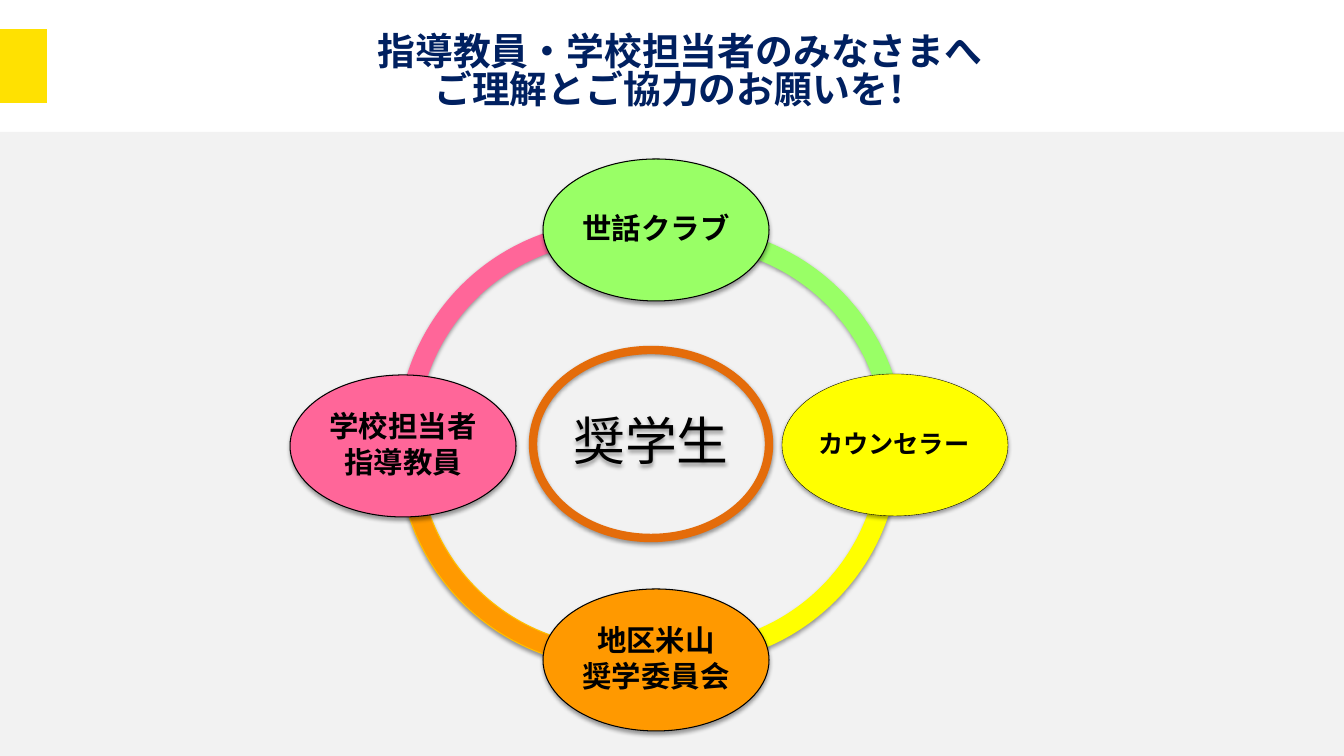
from lxml import etree
from pptx import Presentation
from pptx import util as u
from pptx.dml.color import RGBColor
from pptx.enum import shapes, text
from pptx.oxml.ns import qn

FONT = "Noto Sans CJK JP"
PX = 914400 / 100.8
PINK, ORANGE, YELLOW, GREEN = "FF6699", "FF9900", "FFFF00", "99FF66"
KIND = shapes.MSO_SHAPE
CENTER, LEFT = text.PP_ALIGN.CENTER, text.PP_ALIGN.LEFT


def add_part(kind, box, fill=None, line=None, line_width=0.75, shadow=True):
    """Add a preset shape at box (left, top, width, height in px)."""
    shape = slide.shapes.add_shape(kind, *[round(n * PX) for n in box])
    for target, colour in ((shape.fill, fill), (shape.line.fill, line)):
        if colour:
            target.solid()
            target.fore_color.rgb = RGBColor.from_string(colour)
        else:
            target.background()
    if line:
        shape.line.width = u.Pt(line_width)
    shape.shadow.inherit = False
    if shadow:
        effects = shape._element.spPr.find(qn("a:effectLst"))
        outer = etree.SubElement(effects, qn("a:outerShdw"), blurRad="40000",
                                 dist="20000", dir="5400000", rotWithShape="0")
        colour = etree.SubElement(outer, qn("a:srgbClr"), val="000000")
        etree.SubElement(colour, qn("a:alpha"), val="38000")
    return shape


def write(shape, lines, size, colour="000000", bold=True, align=CENTER,
          spacing=0.9, after=3, inset=3):
    """Fill a shape with one paragraph for each line of text."""
    frame = shape.text_frame
    margin = round(inset * PX)
    frame_format = {"word_wrap": True, "vertical_anchor": text.MSO_ANCHOR.MIDDLE,
                    "margin_left": margin, "margin_right": margin,
                    "margin_top": margin, "margin_bottom": margin}
    for name, value in frame_format.items():
        setattr(frame, name, value)
    paragraph_format = {"alignment": align, "line_spacing": spacing,
                        "space_after": u.Pt(after)}
    font_format = {"name": FONT, "size": u.Pt(size), "bold": bold}
    for index, line in enumerate(lines):
        paragraph = frame.add_paragraph() if index else frame.paragraphs[0]
        paragraph.text = line
        for name, value in paragraph_format.items():
            setattr(paragraph, name, value)
        for run in paragraph.runs:
            for name, value in font_format.items():
                setattr(run.font, name, value)
            run.font.color.rgb = RGBColor.from_string(colour)
            latin = run._r.rPr.find(qn("a:latin"))
            latin.addnext(etree.Element(qn("a:ea"), typeface=FONT))


presentation = Presentation()
presentation.slide_width = round(1344 * PX)
presentation.slide_height = round(756 * PX)
slide = presentation.slides.add_slide(presentation.slide_layouts[6])

# Yellow tab and grey panel
add_part(KIND.RECTANGLE, (0, 29, 47, 74), "FFE101", shadow=False)
add_part(KIND.RECTANGLE, (0, 132, 1344, 624), "F2F2F2", shadow=False)

# Title
title = slide.shapes.add_textbox(*[round(n * PX) for n in (302, 29, 756, 88)])
write(title, ["指導教員・学校担当者のみなさまへ\vご理解とご協力のお願いを！"], 27,
      "002060", spacing=0.84, after=0, inset=0)

# Ring of four arcs: left, top, start and end angle in degrees
ARC_SIZE = 439
arcs = [
    (397, 221, 178.66, 280.39, PINK, None),
    (398, 228, 79.63, 180.54, ORANGE, "FFC000"),
    (461, 226, 359.63, 96.49, YELLOW, None),
    (466, 226, 263.51, 0.37, GREEN, None),
]
for left, top, start, end, fill, line in arcs:
    arc = add_part(KIND.BLOCK_ARC, (left, top, ARC_SIZE, ARC_SIZE), fill, line)
    for index, value in enumerate((start * 0.6, end * 0.6, 0.046)):
        arc.adjustments[index] = value

# Student in the centre
student = add_part(KIND.OVAL, (533, 350, 236, 188), line="E46C0A", line_width=6)
write(student, ["奨学生"], 37, bold=False, inset=5)

# Four supporters around the ring
supporters = [
    (543, 159, GREEN, 0.75, ["世話クラブ"], 21, CENTER),
    (782, 374, YELLOW, 0.25, ["カウンセラー"], 18, LEFT),
    (543, 589, ORANGE, 0.75, ["地区米山", "奨学委員会"], 21, CENTER),
    (290, 375, PINK, 0.75, ["学校担当者", "指導教員"], 21, CENTER),
]
for left, top, fill, width, lines, size, align in supporters:
    oval = add_part(KIND.OVAL, (left, top, 226, 142), fill, "000000", width)
    write(oval, lines, size, align=align)

presentation.save("out.pptx")
